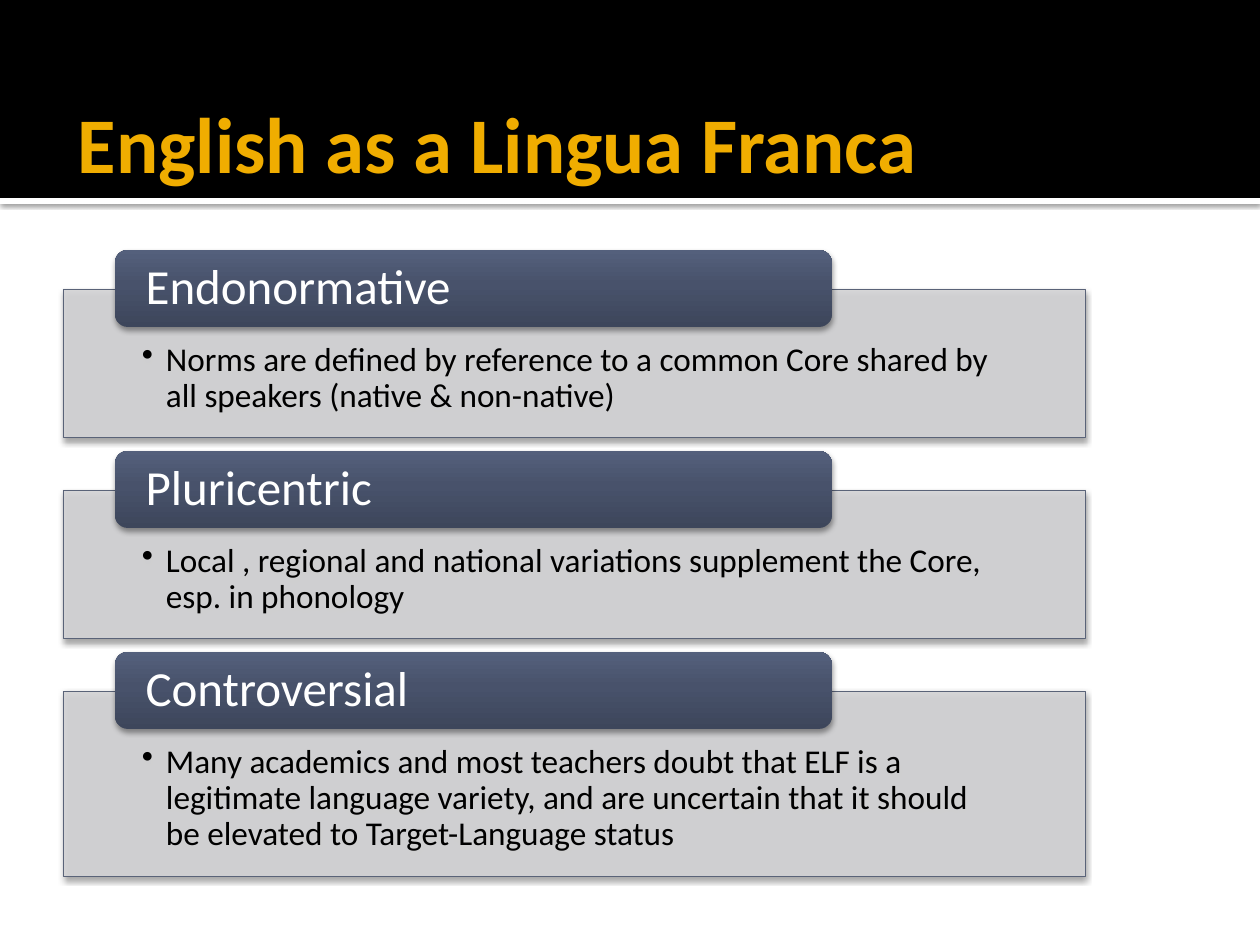
import copy

import pptx
import pptx.dml.color
import pptx.enum.shapes
import pptx.enum.text
import pptx.oxml.ns
import pptx.util
from lxml import etree

RGB = pptx.dml.color.RGBColor
SHAPE = pptx.enum.shapes.MSO_SHAPE
ANCHOR = pptx.enum.text.MSO_ANCHOR
qn = pptx.oxml.ns.qn

BLACK = RGB(0x00, 0x00, 0x00)
WHITE = RGB(0xFF, 0xFF, 0xFF)
GOLD = RGB(0xF0, 0xAD, 0x00)
PANEL_GREY = RGB(0xD4, 0xD4, 0xD6)
SLATE = RGB(0x5A, 0x63, 0x78)
TAB_GRADIENT = [
    (0, RGB(0x3D, 0x46, 0x5B)),
    (0.55, RGB(0x48, 0x52, 0x6B)),
    (1, RGB(0x54, 0x60, 0x7C)),
]

TITLE = "English as a Lingua Franca"
# heading, description, panel height in px
TOPICS = [
    ("Endonormative",
     "Norms are defined by reference to a common Core shared by all speakers "
     "(native & non-native)", 149),
    ("Pluricentric",
     "Local , regional and national variations supplement the Core, "
     "esp. in phonology", 149),
    ("Controversial",
     "Many academics and most teachers doubt that ELF is a legitimate language "
     "variety, and are uncertain that it should be elevated to Target-Language "
     "status", 185),
]

FONT = "Calibri"
SLIDE_W, SLIDE_H = 1260, 945
BAND_H, RULE_H = 198, 6
PANEL_X, PANEL_W = 63, 1023
TAB_X, TAB_W, TAB_H = 115, 717, 77
FIRST_TAB_Y, TAB_RISE, TOPIC_GAP = 250, 39, 13
BULLET_INDENT = 24


def px(length):
    return pptx.util.Emu(round(length * 914400 / 126))


def add_box(slide, kind, x, y, w, h, fill=None):
    box = slide.shapes.add_shape(kind, px(x), px(y), px(w), px(h))
    box.shadow.inherit = False
    box.line.fill.background()
    if fill is not None:
        box.fill.solid()
        box.fill.fore_color.rgb = fill
    return box


def add_shadow(box, blur, distance, opacity):
    """Drop a black shadow straight down; blur and distance in points, opacity in percent."""
    effects = box.element.spPr.find(qn("a:effectLst"))
    shadow = etree.SubElement(
        effects, qn("a:outerShdw"),
        blurRad=str(pptx.util.Pt(blur)), dist=str(pptx.util.Pt(distance)),
        dir="5400000", algn="ctr", rotWithShape="0")
    color = etree.SubElement(shadow, qn("a:srgbClr"), val=str(BLACK))
    etree.SubElement(color, qn("a:alpha"), val=str(opacity * 1000))


def write(box, text, size, color, insets, anchor, bold=False, bullet=False, spacing=None):
    frame = box.text_frame
    frame.word_wrap = True
    frame.vertical_anchor = anchor
    (frame.margin_left, frame.margin_top,
     frame.margin_right, frame.margin_bottom) = map(px, insets)
    paragraph = frame.paragraphs[0]
    paragraph.text = text
    paragraph.alignment = pptx.enum.text.PP_ALIGN.LEFT
    paragraph.line_spacing = spacing
    if bullet:
        properties = paragraph._p.get_or_add_pPr()
        properties.set("marL", str(px(BULLET_INDENT)))
        properties.set("indent", str(-px(BULLET_INDENT)))
        etree.SubElement(properties, qn("a:buChar"), char="•")
    font = paragraph.font
    font.name, font.size, font.bold = FONT, pptx.util.Pt(size), bold
    font.color.rgb = color


def add_panel(slide, y, h, description):
    panel = add_box(slide, SHAPE.RECTANGLE, PANEL_X, y, PANEL_W, h, PANEL_GREY)
    tint = panel.element.spPr.find(qn("a:solidFill"))[0]
    etree.SubElement(tint, qn("a:alpha"), val="90000")
    panel.line.color.rgb = SLATE
    panel.line.width = pptx.util.Pt(0.5)
    add_shadow(panel, 3.1, 2, 38)
    write(panel, description, 19, BLACK, (79, 54, 79, 19), ANCHOR.TOP,
          bullet=True, spacing=0.9)


def add_tab(slide, y, heading):
    tab = add_box(slide, SHAPE.ROUNDED_RECTANGLE, TAB_X, y, TAB_W, TAB_H)
    tab.fill.gradient()
    tab.fill.gradient_angle = 90
    stop_list = next(tab.element.spPr.iter(qn("a:gsLst")))
    stop_list.append(copy.deepcopy(stop_list[0]))
    for stop, (position, color) in zip(tab.fill.gradient_stops, TAB_GRADIENT):
        stop.position = position
        stop.color.rgb = color
    add_shadow(tab, 3.1, 2, 38)
    write(tab, heading, 28, WHITE, (27, 0, 27, 0), ANCHOR.MIDDLE, spacing=0.9)


def main():
    deck = pptx.Presentation()
    deck.slide_width, deck.slide_height = px(SLIDE_W), px(SLIDE_H)
    slide = deck.slides.add_slide(deck.slide_layouts[6])

    rule = add_box(slide, SHAPE.RECTANGLE, 0, BAND_H, SLIDE_W, RULE_H, WHITE)
    add_shadow(rule, 2.5, 0.8, 60)
    add_box(slide, SHAPE.RECTANGLE, 0, 0, SLIDE_W, BAND_H, BLACK)
    title = slide.shapes.add_textbox(px(65), px(56), px(1134), px(172))
    write(title, TITLE, 45, GOLD, (13, 6, 6, 6), ANCHOR.MIDDLE, bold=True)

    tab_y = FIRST_TAB_Y
    for heading, description, panel_h in TOPICS:
        panel_y = tab_y + TAB_RISE
        add_panel(slide, panel_y, panel_h, description)
        add_tab(slide, tab_y, heading)
        tab_y = panel_y + panel_h + TOPIC_GAP

    deck.save("out.pptx")


if __name__ == "__main__":
    main()
